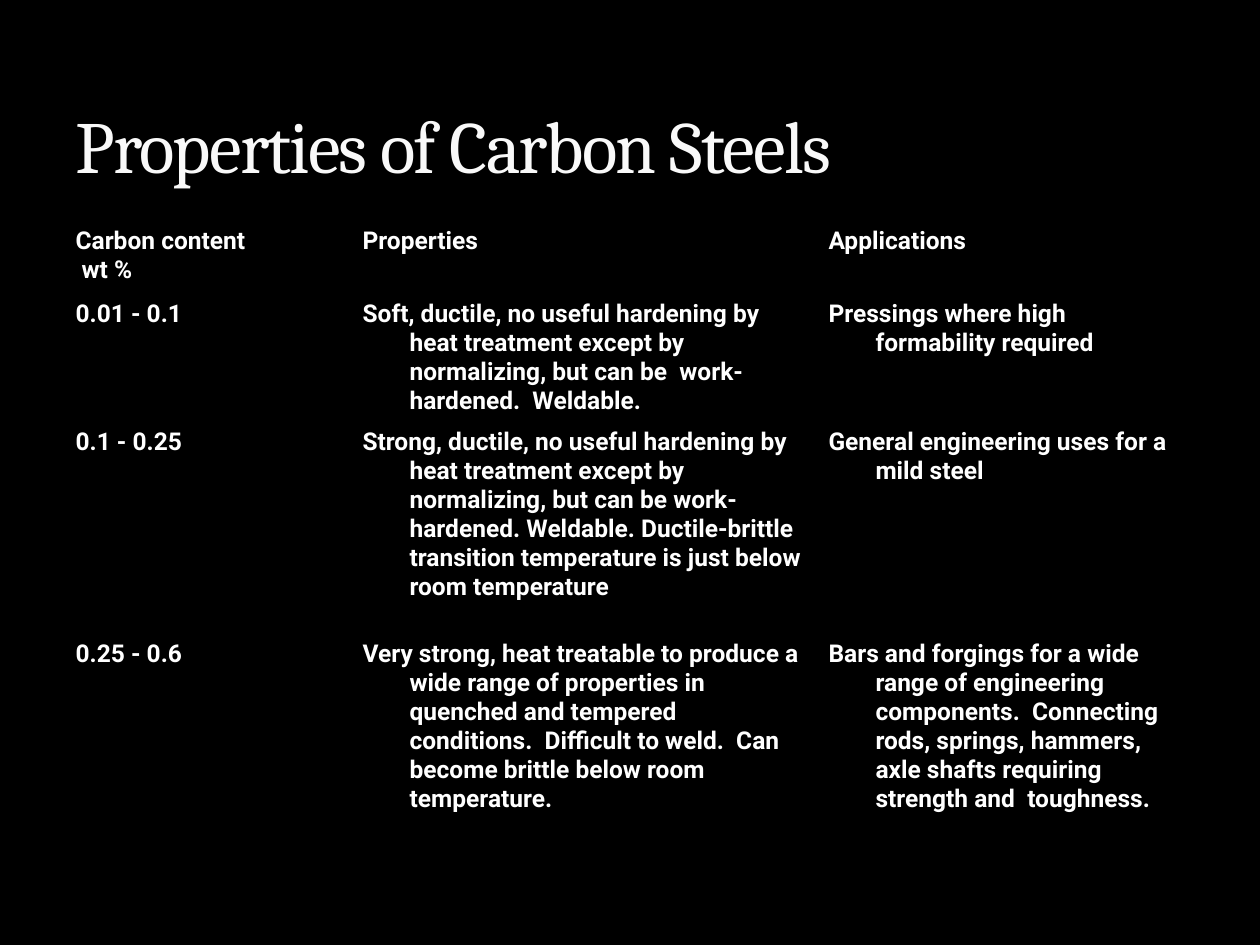
"""Build a slide with a table of carbon steel properties."""
from dataclasses import dataclass

from lxml.etree import SubElement
from pptx import Presentation
from pptx.dml.color import RGBColor
from pptx.enum.text import MSO_ANCHOR, MSO_AUTO_SIZE, PP_ALIGN
from pptx.oxml import parse_xml
from pptx.oxml.ns import nsdecls, qn
from pptx.util import Emu, Pt

PX_PER_INCH = 126
COLORS = {
    "background": "000000",
    "title": "F9F9F9",
    "title_outline": "3C4422",
    "body": "FFFFFF",
    "border": "000000",
}
COLUMN_WIDTHS = (287, 466, 381)
TABLE_LEFT, TABLE_TOP = 63, 220
HANGING_INDENT = 47


@dataclass(frozen=True)
class SteelRow:
    height: int
    carbon: tuple[str, ...]
    properties: str
    applications: str


ROWS = (
    SteelRow(73, ("Carbon content", " wt %"), "Properties", "Applications"),
    SteelRow(
        128,
        ("0.01 - 0.1",),
        "Soft, ductile, no useful hardening by heat treatment except by "
        "normalizing, but can be  work-hardened.  Weldable.",
        "Pressings where high formability required",
    ),
    SteelRow(
        212,
        ("0.1 - 0.25",),
        "Strong, ductile, no useful hardening by heat treatment except by "
        "normalizing, but can be work-hardened. Weldable. Ductile-brittle "
        "transition temperature is just below room temperature",
        "General engineering uses for a mild steel",
    ),
    SteelRow(
        212,
        ("0.25 - 0.6",),
        "Very strong, heat treatable to produce a wide range of properties in "
        "quenched and tempered conditions.  Difficult to weld.  Can become "
        "brittle below room temperature.",
        "Bars and forgings for a wide range of engineering components.  "
        "Connecting rods, springs, hammers, axle shafts requiring strength "
        "and  toughness.",
    ),
)


def px(length: int) -> Emu:
    """Convert pixels to EMU."""
    return Emu(round(length * 914400 / PX_PER_INCH))


def add_span(para, text: str, font_name: str, size: int, color: str, bold: bool = False):
    """Add one formatted run and return it."""
    span = para.add_run()
    span.text = text
    font = span.font
    font.name, font.size, font.bold = font_name, Pt(size), bold
    font.color.rgb = RGBColor.from_string(COLORS[color])
    return span


def fill_title(title, text: str) -> None:
    """Place and format the title placeholder."""
    title.left, title.top, title.width, title.height = map(px, (63, 38, 1134, 157))
    frame = title.text_frame
    frame.word_wrap = True
    frame.auto_size = MSO_AUTO_SIZE.NONE
    frame.vertical_anchor = MSO_ANCHOR.BOTTOM
    para = frame.paragraphs[0]
    para.alignment = PP_ALIGN.LEFT
    span = add_span(para, text, "Cambria", 42, "title")
    properties = span.font._element
    properties.set("spc", "-100")
    properties.insert(0, parse_xml(
        f'<a:ln {nsdecls("a")} w="{Pt(0.25)}"><a:solidFill>'
        f'<a:srgbClr val="{COLORS["title_outline"]}"><a:alpha val="25000"/></a:srgbClr>'
        "</a:solidFill></a:ln>"
    ))


def add_borders(cell) -> None:
    """Draw a thin line on every side of a cell."""
    properties = cell._tc.get_or_add_tcPr()
    for position, side in enumerate(("lnL", "lnR", "lnT", "lnB")):
        line = SubElement(properties, qn(f"a:{side}"), w=str(Pt(1)))
        fill = SubElement(line, qn("a:solidFill"))
        SubElement(fill, qn("a:srgbClr"), val=COLORS["border"])
        properties.insert(position, line)


def fill_cell(cell, lines: tuple[str, ...]) -> None:
    """Write hanging paragraphs into a cell."""
    cell.fill.background()
    add_borders(cell)
    frame = cell.text_frame
    for index, line in enumerate(lines):
        para = frame.add_paragraph() if index else frame.paragraphs[0]
        indent = px(HANGING_INDENT)
        properties = para._p.get_or_add_pPr()
        properties.set("marL", str(indent))
        properties.set("indent", str(-indent))
        add_span(para, line, "Roboto", 14, "body", bold=True)


def add_steel_table(page, rows: tuple[SteelRow, ...]) -> None:
    """Add the table of steel grades."""
    width, height = sum(COLUMN_WIDTHS), sum(row.height for row in rows)
    table = page.shapes.add_table(
        len(rows), len(COLUMN_WIDTHS), *map(px, (TABLE_LEFT, TABLE_TOP, width, height))
    ).table
    table.first_row = table.horz_banding = False
    for column, column_width in zip(table.columns, COLUMN_WIDTHS):
        column.width = px(column_width)
    for table_row, row in zip(table.rows, rows):
        table_row.height = px(row.height)
        contents = (row.carbon, (row.properties,), (row.applications,))
        for cell, lines in zip(table_row.cells, contents):
            fill_cell(cell, lines)


def main() -> None:
    """Create and save the deck."""
    deck = Presentation()
    deck.slide_width, deck.slide_height = px(1260), px(945)
    page = deck.slides.add_slide(deck.slide_layouts.get_by_name("Title Only"))
    background = page.background.fill
    background.solid()
    background.fore_color.rgb = RGBColor.from_string(COLORS["background"])
    fill_title(page.shapes.title, "Properties of Carbon Steels")
    add_steel_table(page, ROWS)
    deck.save("out.pptx")


if __name__ == "__main__":
    main()
